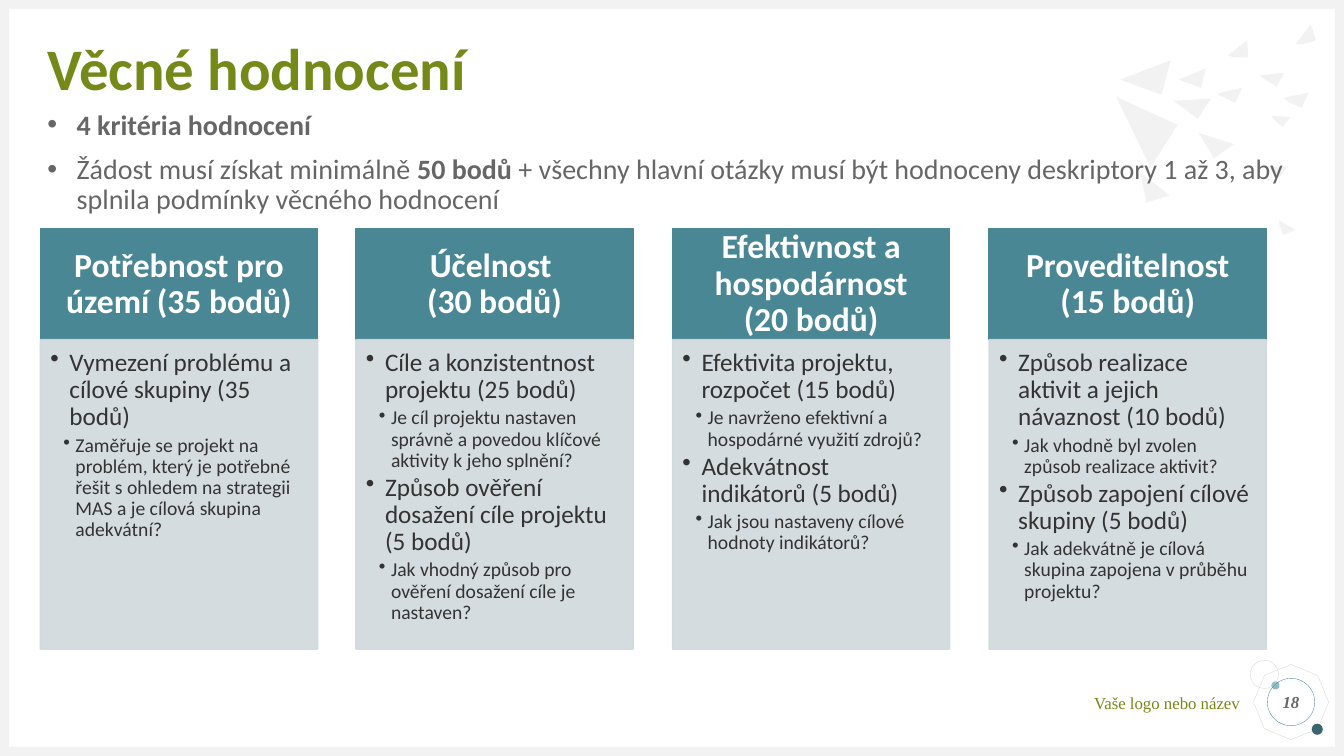
from dataclasses import dataclass

from lxml import etree
from pptx import Presentation
from pptx.dml.color import RGBColor
from pptx.enum.shapes import MSO_SHAPE
from pptx.enum.text import MSO_ANCHOR, MSO_AUTO_SIZE, PP_ALIGN
from pptx.oxml.ns import qn
from pptx.util import Pt

PX = 9144  # 100 px to the inch
WIDTH, HEIGHT, EDGE = 1333, 750, 9
RECT, OVAL, OCTAGON = MSO_SHAPE.RECTANGLE, MSO_SHAPE.OVAL, MSO_SHAPE.OCTAGON
TOP, MIDDLE = MSO_ANCHOR.TOP, MSO_ANCHOR.MIDDLE
LEFT, CENTER, RIGHT = PP_ALIGN.LEFT, PP_ALIGN.CENTER, PP_ALIGN.RIGHT
SANS, SERIF = "Calibri", "Times New Roman"
COLORS = {
    "olive": "758918", "teal": "4A8795", "panel": "D0D9DD", "white": "FFFFFF",
    "ink": "333333", "gray": "666666", "pale": "F2F2F2", "outline": "D9D9D9",
    "sky": "8CBBC6", "deep": "376570",
}
COLUMN_LEFT, COLUMN_SPAN, COLUMN_WIDTH = 40, 941, 275
HEADER_TOP, HEADER_HEIGHT, PANEL_HEIGHT = 227, 110, 307


@dataclass(frozen=True)
class Question:
    heading: str
    detail: str


@dataclass(frozen=True)
class Criterion:
    title: tuple[str, ...]
    questions: tuple[Question, ...]


@dataclass(frozen=True)
class Ornament:
    kind: int
    area: tuple[int, int, int, int]
    fill: str | None = None
    line: str | None = None
    rotation: float = 0


CRITERIA = (
    Criterion(("Potřebnost pro území (35 bodů)",), (
        Question("Vymezení problému a cílové skupiny (35 bodů)",
                 "Zaměřuje se projekt na problém, který je potřebné řešit s ohledem "
                 "na strategii MAS a je cílová skupina adekvátní?"),)),
    Criterion(("Účelnost ", "(30 bodů)"), (
        Question("Cíle a konzistentnost projektu (25 bodů)",
                 "Je cíl projektu nastaven správně a povedou klíčové aktivity k jeho splnění?"),
        Question("Způsob ověření dosažení cíle projektu (5 bodů)",
                 "Jak vhodný způsob pro ověření dosažení cíle je nastaven?"))),
    Criterion(("Efektivnost a hospodárnost (20 bodů)",), (
        Question("Efektivita projektu, rozpočet (15 bodů)",
                 "Je navrženo efektivní a hospodárné využití zdrojů?"),
        Question("Adekvátnost indikátorů (5 bodů)",
                 "Jak jsou nastaveny cílové hodnoty indikátorů?"))),
    Criterion(("Proveditelnost (15 bodů)",), (
        Question("Způsob realizace aktivit a jejich návaznost (10 bodů)",
                 "Jak vhodně byl zvolen způsob realizace aktivit?"),
        Question("Způsob zapojení cílové skupiny (5 bodů)",
                 "Jak adekvátně je cílová skupina zapojena v průběhu projektu?"))),
)
INTRO = (
    (("4 kritéria hodnocení", True),),
    (("Žádost musí získat minimálně ", False), ("50 bodů ", True),
     ("+ všechny hlavní otázky musí být hodnoceny deskriptory 1 až 3, aby splnila "
      "podmínky věcného hodnocení", False)),
)
ORNAMENTS = (
    Ornament(OCTAGON, (1246, 662, 69, 69), line="outline", rotation=22.7),
    Ornament(OVAL, (1261, 676, 8, 8), fill="sky"),
    Ornament(OVAL, (1301, 718, 11, 11), fill="deep"),
    Ornament(OVAL, (1240, 655, 28, 28), line="outline"),
    Ornament(RECT, (0, HEIGHT - EDGE, WIDTH, EDGE), fill="pale"),
    Ornament(RECT, (0, 0, WIDTH, EDGE), fill="pale"),
    Ornament(RECT, (0, 0, EDGE, HEIGHT), fill="pale"),
    Ornament(RECT, (WIDTH - EDGE, 0, EDGE, HEIGHT), fill="pale"),
)
SHARDS = (
    ((1161, 60), (1152, 94), (1111, 79)),
    ((1201, 98), (1188, 118), (1164, 100)),
    ((1196, 68), (1191, 87), (1169, 79)),
    ((1232, 87), (1225, 102), (1207, 93)),
    ((1237, 40), (1238, 57), (1224, 57), (1218, 55)),
    ((1280, 116), (1272, 126), (1264, 119), (1261, 115)),
    ((1300, 24), (1305, 40), (1292, 44), (1285, 44)),
    ((1274, 72), (1266, 86), (1249, 75)),
    ((1298, 92), (1291, 107), (1278, 101), (1273, 97)),
    ((1168, 124), (1141, 166), (1107, 96)),
    ((1224, 143), (1204, 157), (1189, 132)),
    ((1276, 166), (1269, 176), (1260, 169), (1258, 165)),
    ((1160, 194), (1137, 201), (1131, 171)),
    ((1285, 228), (1273, 233), (1269, 223), (1269, 219)),
)


def rgb(name: str) -> RGBColor:
    return RGBColor.from_string(COLORS[name])


def scaled(area: tuple[int, ...]) -> list[int]:
    return [length * PX for length in area]


def paint(shape, fill: str | None = None, line: str | None = None,
          line_width: float = 0.25) -> None:
    shape.shadow.inherit = False
    if fill:
        shape.fill.solid()
        shape.fill.fore_color.rgb = rgb(fill)
    else:
        shape.fill.background()
    if line:
        shape.line.color.rgb = rgb(line)
        shape.line.width = Pt(line_width)
    else:
        shape.line.fill.background()


def add_shape(page, kind: int, area: tuple[int, int, int, int], **style):
    shape = page.shapes.add_shape(kind, *scaled(area))
    paint(shape, **style)
    return shape


def set_frame(box, insets: tuple[int, int, int, int] = (0, 0, 0, 0), anchor=TOP):
    frame = box.text_frame
    frame.word_wrap = True
    frame.auto_size = MSO_AUTO_SIZE.NONE
    frame.vertical_anchor = anchor
    (frame.margin_left, frame.margin_top,
     frame.margin_right, frame.margin_bottom) = scaled(insets)
    return frame


def add_paragraph(frame, *, align=LEFT, bullet: tuple[int, int] | None = None,
                  level: int = 0, before: float = 0, after: float = 0, spacing: float = 0.9):
    """Start a paragraph; bullet holds its left margin and hanging indent in px."""
    first = frame.paragraphs[0]
    para = frame.add_paragraph() if first.runs else first
    if bullet:
        margin, hang = scaled(bullet)
        properties = para._p.get_or_add_pPr()
        properties.set("marL", str(margin))
        properties.set("indent", str(-hang))
        etree.SubElement(properties, qn("a:buChar")).set("char", "•")
    para.level = level
    para.alignment = align
    para.line_spacing = spacing
    para.space_before, para.space_after = Pt(before), Pt(after)
    return para


def add_span(para, text: str, *, size: int, color: str, font: str = SANS,
             bold: bool = False, italic: bool = False) -> None:
    span = para.add_run()
    span.text = text
    span.font.name, span.font.size = font, Pt(size)
    span.font.bold, span.font.italic = bold, italic
    span.font.color.rgb = rgb(color)


def add_criterion(page, left: int, criterion: Criterion) -> None:
    header = add_shape(page, RECT, (left, HEADER_TOP, COLUMN_WIDTH, HEADER_HEIGHT),
                       fill="teal", line="teal", line_width=1)
    frame = set_frame(header, (19, 11, 19, 11), MIDDLE)
    for text in criterion.title:
        add_span(add_paragraph(frame, align=CENTER), text, size=24, color="white", bold=True)

    panel = add_shape(page, RECT, (left, HEADER_TOP + HEADER_HEIGHT, COLUMN_WIDTH, PANEL_HEIGHT),
                      fill="panel", line="panel", line_width=1)
    for color in panel._element.spPr.iter(qn("a:srgbClr")):
        etree.SubElement(color, qn("a:alpha")).set("val", "90000")
    frame = set_frame(panel, (10, 10, 14, 16))
    for question in criterion.questions:
        for level, text, size, bullet in ((1, question.heading, 18, (19, 19)),
                                          (2, question.detail, 14, (25, 12))):
            para = add_paragraph(frame, level=level, bullet=bullet, after=size * 0.15)
            add_span(para, text, size=size, color="ink")


def place_placeholder(box, area: tuple[int, int, int, int]) -> None:
    """Position a placeholder and bring it to the front."""
    box.left, box.top, box.width, box.height = scaled(area)
    box._element.getparent().append(box._element)


def main() -> None:
    deck = Presentation()
    deck.slide_width, deck.slide_height = scaled((WIDTH, HEIGHT))
    page = deck.slides.add_slide(deck.slide_layouts[1])

    for item in ORNAMENTS:
        add_shape(page, item.kind, item.area, fill=item.fill, line=item.line).rotation = item.rotation
    for start, *others in SHARDS:
        builder = page.shapes.build_freeform(*start, scale=PX)
        builder.add_line_segments(others, close=True)
        paint(builder.convert_to_shape(), fill="pale")
    footer = set_frame(page.shapes.add_textbox(*scaled((955, 687, 275, 20))))
    add_span(add_paragraph(footer, align=RIGHT, spacing=1.0), "Vaše logo nebo název",
             size=12, color="olive", font=SERIF)

    for index, criterion in enumerate(CRITERIA):
        add_criterion(page, COLUMN_LEFT + index * COLUMN_SPAN // 3, criterion)

    title, body = page.shapes.title, page.placeholders[1]
    place_placeholder(body, (47, 110, 1240, 512))
    frame = set_frame(body)
    for index, spans in enumerate(INTRO):
        para = add_paragraph(frame, bullet=(29, 29), before=10 if index else 0)
        for text, bold in spans:
            add_span(para, text, size=20, color="gray", bold=bold)
    place_placeholder(title, (47, 47, 1240, 47))
    add_span(add_paragraph(set_frame(title, anchor=MIDDLE)), "Věcné hodnocení",
             size=42, color="olive", bold=True)

    badge = add_shape(page, OVAL, (1257, 673, 47, 47), line="teal")
    number = add_paragraph(set_frame(badge, anchor=MIDDLE), align=CENTER, spacing=1.0)
    add_span(number, "18", size=12, color="gray", font=SERIF, bold=True, italic=True)
    deck.save("out.pptx")


if __name__ == "__main__":
    main()
